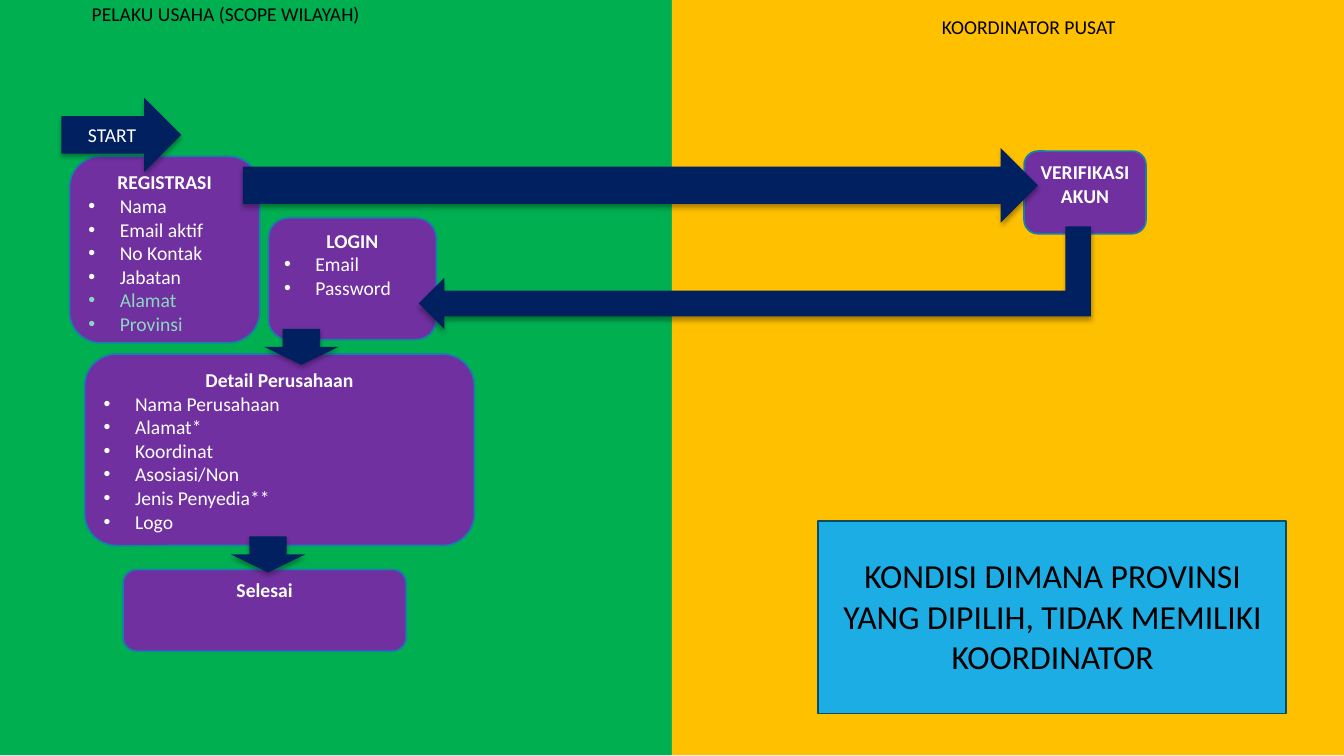
from lxml.etree import SubElement
from pptx import Presentation
from pptx.dml.color import RGBColor
from pptx.enum.shapes import MSO_SHAPE
from pptx.enum.text import MSO_ANCHOR, MSO_AUTO_SIZE, PP_ALIGN
from pptx.oxml.ns import qn
from pptx.util import Cm, Pt

GREEN, AMBER, PURPLE, NAVY = "00B050", "FFC000", "7030A0", "002060"
BLUE, BLUE_EDGE, TEAL_EDGE, MINT = "1CADE4", "0C4C64", "1580A9", "8DD6C1"
WHITE, BLACK = "FFFFFF", "000000"


def color(value):
    return RGBColor.from_string(value)


def add_panel(slide, place, fill, edge=None, preset=MSO_SHAPE.RECTANGLE):
    panel = slide.shapes.add_shape(preset, *map(Cm, place))
    panel.shadow.inherit = False
    panel.fill.solid()
    panel.fill.fore_color.rgb = color(fill)
    if edge:
        panel.line.color.rgb = color(edge)
        panel.line.width = Pt(1.25)
    else:
        panel.line.fill.background()
    return panel


def write(paragraph, text, size=14, ink=WHITE, bold=False, bullet=False):
    run = paragraph.add_run()
    run.text = text
    run.font.name = "Calibri"
    run.font.size = Pt(size)
    run.font.bold = bold
    run.font.color.rgb = color(ink)
    paragraph.alignment = PP_ALIGN.LEFT if bullet else PP_ALIGN.CENTER
    if bullet:
        properties = paragraph._p.get_or_add_pPr()
        properties.set("marL", str(Cm(0.79)))
        properties.set("indent", str(-Cm(0.79)))
        SubElement(properties, qn("a:buFont"), typeface="Arial")
        SubElement(properties, qn("a:buChar"), char="•")


def add_step(slide, place, title, items=(), highlighted=()):
    step = add_panel(slide, place, PURPLE, TEAL_EDGE, MSO_SHAPE.ROUNDED_RECTANGLE)
    frame = step.text_frame
    frame.vertical_anchor = MSO_ANCHOR.TOP
    write(frame.paragraphs[0], title, bold=True)
    for item in items:
        ink = MINT if item in highlighted else WHITE
        write(frame.add_paragraph(), item, ink=ink, bullet=True)


def add_arrow(slide, place, preset=MSO_SHAPE.RIGHT_ARROW, rotation=0, mirrored=False):
    arrow = add_panel(slide, place, NAVY, preset=preset)
    arrow.rotation = rotation
    properties = arrow._element.spPr
    if mirrored:
        properties.find(qn("a:xfrm")).set("flipH", "1")
    shadow = SubElement(
        properties.find(qn("a:effectLst")), qn("a:outerShdw"),
        blurRad=str(Pt(3.5)), dist=str(Pt(2.2)), dir="5400000", rotWithShape="0")
    tint = SubElement(shadow, qn("a:srgbClr"), val=BLACK)
    SubElement(tint, qn("a:alpha"), val="32000")
    return arrow


def add_label(slide, place, text, size=14, wrap=False):
    label = slide.shapes.add_textbox(*map(Cm, place))
    frame = label.text_frame
    frame.word_wrap = wrap
    frame.auto_size = MSO_AUTO_SIZE.SHAPE_TO_FIT_TEXT
    write(frame.paragraphs[0], text, size=size, ink=BLACK)


def main():
    deck = Presentation()
    deck.slide_width, deck.slide_height = Cm(33.87), Cm(19.05)
    slide = deck.slides.add_slide(deck.slide_layouts[6])

    half = 33.87 / 2
    for column, fill in enumerate((GREEN, AMBER)):
        add_panel(slide, (column * half, -0.02, half, 19.05), fill)

    add_step(slide, (3.1, 14.35, 7.14, 2.06), "Selesai")
    add_step(slide, (2.13, 8.92, 9.83, 4.83), "Detail Perusahaan",
             ("Nama Perusahaan", "Alamat*", "Koordinat", "Asosiasi/Non",
              "Jenis Penyedia**", "Logo"))
    add_step(slide, (6.76, 5.49, 4.24, 3.07), "LOGIN", ("Email", "Password"))
    add_arrow(slide, (6.3, 13.03, 0.91, 1.88), rotation=90)

    add_label(slide, (2.03, -0.08, 7.32, 0.86), "PELAKU USAHA (SCOPE WILAYAH)")
    add_label(slide, (23.37, 0.25, 5.11, 0.86), "KOORDINATOR PUSAT")

    add_step(slide, (1.75, 3.94, 4.8, 4.7), "REGISTRASI",
             ("Nama", "Email aktif", "No Kontak", "Jabatan", "Alamat", "Provinsi"),
             highlighted=("Alamat", "Provinsi"))
    add_arrow(slide, (7.14, 7.8, 0.91, 1.88), rotation=90)
    start = add_arrow(slide, (1.55, 2.46, 3.02, 1.88))
    start.text_frame.vertical_anchor = MSO_ANCHOR.MIDDLE
    write(start.text_frame.paragraphs[0], "START")

    add_step(slide, (25.81, 3.81, 3.07, 2.08), "VERIFIKASI AKUN")
    add_arrow(slide, (6.12, 3.73, 20.04, 1.88))
    add_arrow(slide, (17.73, -1.47, 2.59, 16.94), MSO_SHAPE.BENT_UP_ARROW,
              rotation=270, mirrored=True)

    add_panel(slide, (20.62, 13.13, 11.79, 4.85), BLUE, BLUE_EDGE)
    add_label(slide, (20.75, 13.87, 11.56, 3.33),
              "KONDISI DIMANA PROVINSI YANG DIPILIH, TIDAK MEMILIKI KOORDINATOR",
              size=24, wrap=True)

    deck.save("out.pptx")


if __name__ == "__main__":
    main()
